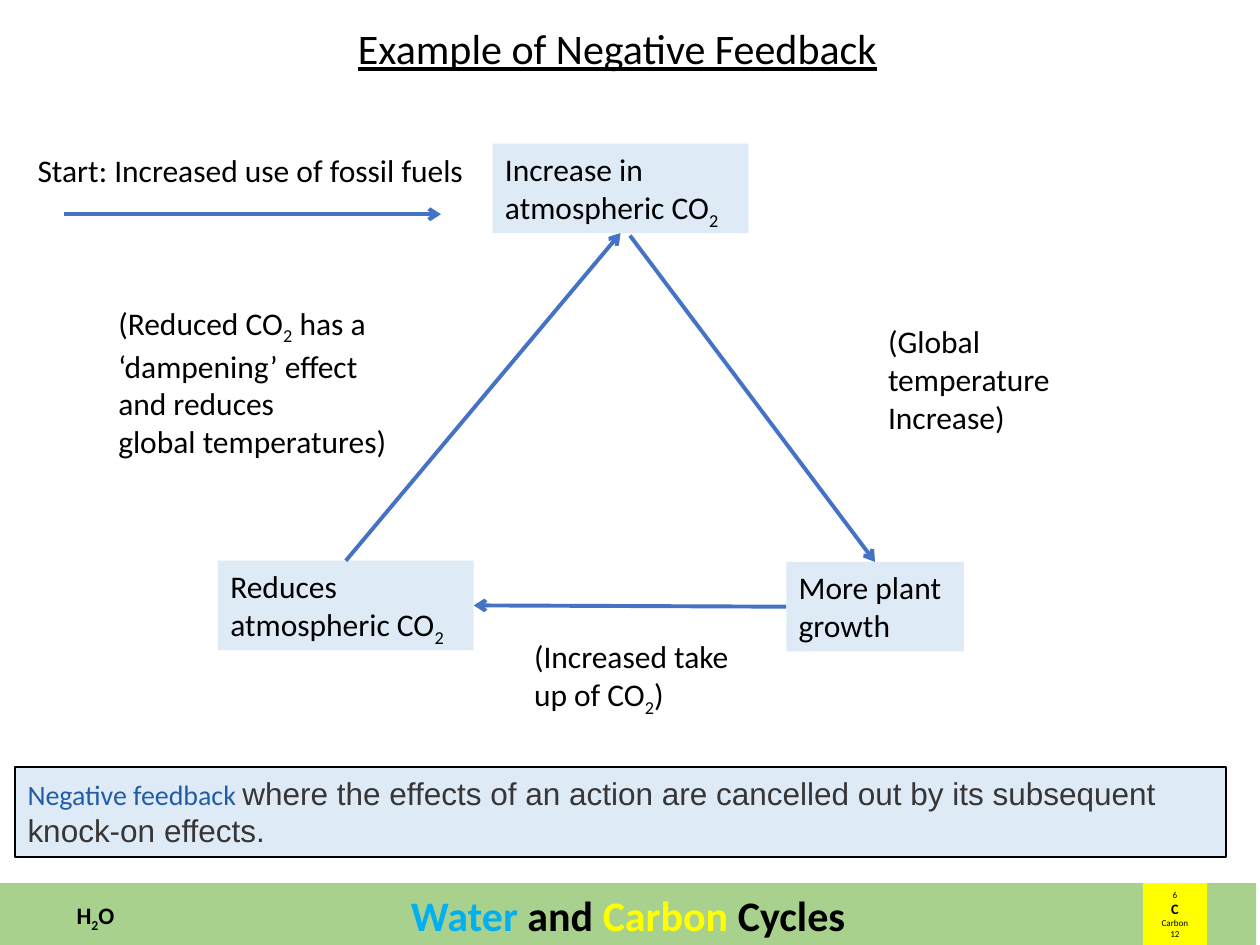
import pptx
import pptx.util
import pptx.dml.color
import pptx.enum.shapes
import pptx.enum.text
import pptx.oxml
import pptx.oxml.ns

Inches = pptx.util.Inches
Pt = pptx.util.Pt
RGB = pptx.dml.color.RGBColor
ALIGN = pptx.enum.text.PP_ALIGN
ANCHOR = pptx.enum.text.MSO_ANCHOR
RECT = pptx.enum.shapes.MSO_SHAPE.RECTANGLE
STRAIGHT = pptx.enum.shapes.MSO_CONNECTOR.STRAIGHT

BLACK = RGB(0x00, 0x00, 0x00)
GREEN = RGB(0xA9, 0xD1, 0x8E)
YELLOW = RGB(0xFF, 0xFF, 0x00)
WATER = RGB(0x00, 0xB0, 0xF0)
PALE = RGB(0xDE, 0xEB, 0xF7)
BLUE = RGB(0x44, 0x72, 0xC4)
TERM = RGB(0x22, 0x5C, 0xA8)
GREY = RGB(0x37, 0x35, 0x36)
TOP, LEFT, BOTTOM, RIGHT = range(4)


def style(font, size, color=BLACK, bold=False, name="Calibri"):
    font.name = name
    font.size = Pt(size)
    font.bold = bold
    font.color.rgb = color


def write(shape, lines, size=18, bold=False, align=ALIGN.LEFT):
    frame = shape.text_frame
    frame.word_wrap = True
    for i, line in enumerate(lines):
        para = frame.paragraphs[0] if i == 0 else frame.add_paragraph()
        para.alignment = align
        style(para.font, size, bold=bold)
        for j, part in enumerate(line.split("~")):
            run = para.add_run()
            run.text = part
            if j % 2:
                run.font._element.set("baseline", "-25000")


def label(slide, box, lines, **look):
    shape = slide.shapes.add_textbox(*map(Inches, box))
    write(shape, lines, **look)


def block(slide, box, fill):
    shape = slide.shapes.add_shape(RECT, *map(Inches, box))
    shape.shadow.inherit = False
    shape.fill.solid()
    shape.fill.fore_color.rgb = fill
    shape.line.fill.background()
    shape.text_frame.vertical_anchor = ANCHOR.TOP
    return shape


def node(slide, box, lines):
    shape = block(slide, box, PALE)
    write(shape, lines)
    return shape


def arrow(slide, start, end):
    line = slide.shapes.add_connector(STRAIGHT, *map(Inches, start + end))
    line.line.color.rgb = BLUE
    line.line.width = Pt(2.25)
    pptx.oxml.ns.qn("a:ln")
    tail = pptx.oxml.parse_xml(
        '<a:tailEnd xmlns:a="http://schemas.openxmlformats.org/drawingml/2006/main"'
        ' type="arrow"/>')
    line.line._get_or_add_ln().append(tail)
    props = line._element.spPr
    props.append(props.makeelement(pptx.oxml.ns.qn("a:effectLst"), {}))
    return line


def title(slide, box):
    shape = slide.shapes.title
    shape.left, shape.top, shape.width, shape.height = map(Inches, box)
    frame = shape.text_frame
    frame.text = "Example of Negative Feedback"
    frame.word_wrap = False
    frame.auto_size = pptx.enum.text.MSO_AUTO_SIZE.NONE
    frame.vertical_anchor = ANCHOR.TOP
    para = frame.paragraphs[0]
    para.alignment = ALIGN.LEFT
    style(para.font, 24)
    para.font.underline = True


def cycle(slide, box):
    x, y, w, h = box
    rise = node(slide, (x + 3.71, y, 2.03, 0.71),
                ["Increase in", "atmospheric CO~2~"])
    plant = node(slide, (x + 6.04, y + 3.32, 1.41, 0.71),
                 ["More plant", "growth"])
    drop = node(slide, (x + 1.53, y + 3.31, 2.03, 0.71),
                ["Reduces", "atmospheric CO~2~"])

    label(slide, (x, y + 0.01, 3.7, 0.4),
          ["Start: Increased use of fossil fuels"])
    label(slide, (x + 6.75, y + 1.37, 1.63, 1.01),
          ["(Global temperature", "Increase)"])
    label(slide, (x + 3.94, y + h - 0.71, 1.83, 0.71),
          ["(Increased take", "up of CO~2~)"])
    label(slide, (x + 0.64, y + 1.22, 2.42, 1.31),
          ["(Reduced CO~2~ has a", "‘dampening’ effect", "and reduces",
           "global temperatures)"])

    arrow(slide, (x + 0.31, y + 0.56), (x + 3.3, y + 0.56))
    warm = arrow(slide, (x + 4.8, y + 0.73), (x + 6.75, y + 3.32))
    warm.end_connect(plant, TOP)
    for start, side, end, goal in ((plant, LEFT, drop, RIGHT),
                                   (drop, TOP, rise, BOTTOM)):
        line = arrow(slide, (x, y), (x + w, y + h))
        line.begin_connect(start, side)
        line.end_connect(end, goal)


def meaning(slide, box):
    shape = block(slide, box, PALE)
    shape.line.color.rgb = BLACK
    shape.line.width = Pt(1)
    shape.text_frame.word_wrap = True
    para = shape.text_frame.paragraphs[0]
    para.alignment = ALIGN.LEFT
    term = para.add_run()
    term.text = "Negative feedback "
    style(term.font, 16, TERM)
    rest = para.add_run()
    rest.text = ("where the effects of an action are cancelled out "
                 "by its subsequent knock-on effects.")
    style(rest.font, 18, GREY, name="Arial")


def footer(slide, box):
    x, y, w, h = box
    bar = block(slide, box, GREEN)
    para = bar.text_frame.paragraphs[0]
    para.alignment = ALIGN.CENTER
    for text, color in (("Water", WATER), (" and ", BLACK),
                        ("Carbon", YELLOW), (" Cycles", BLACK)):
        run = para.add_run()
        run.text = text
        style(run.font, 24, color, bold=True)

    card = block(slide, (x + 9.07, y, 0.51, h), YELLOW)
    write(card, ["6", "C", "Carbon", "12"], size=5.2, align=ALIGN.CENTER)
    sign = card.text_frame.paragraphs[1]
    style(sign.font, 8.2, bold=True)
    label(slide, (x + 0.51, y + 0.09, 0.52, 0.33), ["H~2~O"],
          size=13.5, bold=True)


def main():
    deck = pptx.Presentation()
    deck.slide_width = Inches(10)
    deck.slide_height = Inches(7.5)
    slide = deck.slides.add_slide(deck.slide_layouts[5])
    footer(slide, (0, 7.01, 9.97, 0.5))
    title(slide, (2.74, 0.13, 4.36, 0.5))
    cycle(slide, (0.2, 1.14, 8.38, 4.58))
    meaning(slide, (0.12, 6.09, 9.61, 0.71))
    deck.save("out.pptx")


if __name__ == "__main__":
    main()
